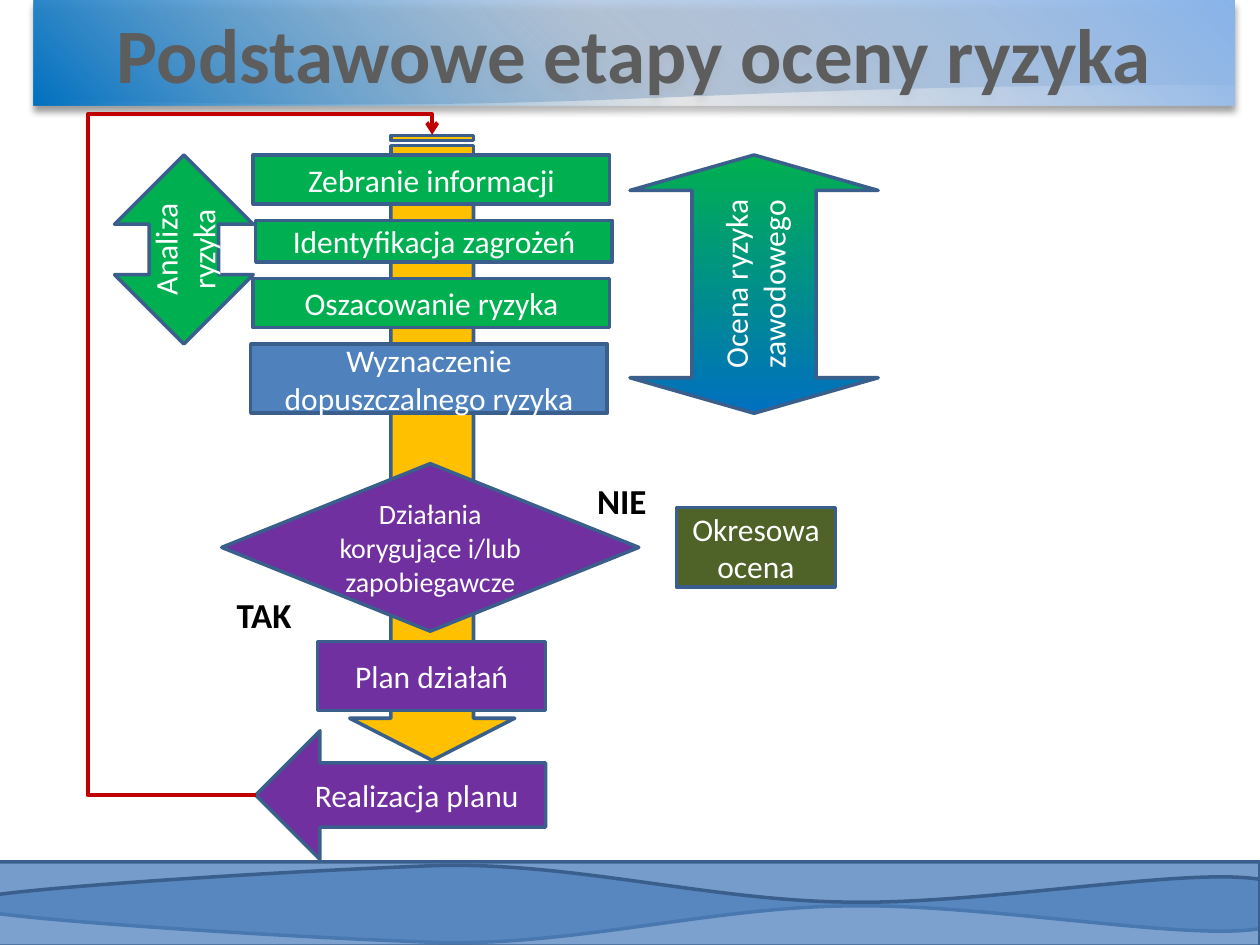
"""Build the slide showing the basic stages of risk assessment."""
from dataclasses import dataclass
from typing import Optional

from lxml import etree
from pptx import Presentation
from pptx.dml.color import RGBColor
from pptx.enum.shapes import MSO_CONNECTOR, MSO_SHAPE
from pptx.enum.text import MSO_ANCHOR, PP_ALIGN
from pptx.oxml.ns import qn
from pptx.util import Inches, Pt

SLIDE_WIDTH, SLIDE_HEIGHT = Inches(10), Inches(7.5)
GRID_COLUMNS = 10
UNIT = SLIDE_WIDTH / GRID_COLUMNS
RECTANGLE = MSO_SHAPE.RECTANGLE
DOCUMENT = MSO_SHAPE.FLOWCHART_DOCUMENT
STRIPED_ARROW = MSO_SHAPE.STRIPED_RIGHT_ARROW
DOUBLE_ARROW = MSO_SHAPE.UP_DOWN_ARROW
LEFT_ARROW = MSO_SHAPE.LEFT_ARROW
DECISION = MSO_SHAPE.FLOWCHART_DECISION
ELBOW = MSO_CONNECTOR.ELBOW
MIDDLE, CENTER = MSO_ANCHOR.MIDDLE, PP_ALIGN.CENTER
FONT = "Calibri"
BLUE, BORDER, GREEN, PURPLE = "4F81BD", "3A5F8C", "00B050", "7030A0"
WHITE, BLACK, AMBER, OLIVE, RED = "FFFFFF", "000000", "FFC000", "4F6228", "C00000"
TITLE_GREY = "5D5D5D"

WAVE_MIRROR = 14.35
WAVE_EDGE = [(-0.03, 6.84), (10, 6.84), (10, 7.37)]
WAVE_CURVES = [
    (9.42, 7.47), (7.82, 7.17), (6.73, 7.19),
    (5.64, 7.2), (4.55, 7.51), (3.46, 7.48),
    (2.36, 7.44), (0.58, 7.33), (-0.02, 7.25),
]


@dataclass
class Stage:
    """A filled shape of the diagram, placed in grid units."""
    kind: MSO_SHAPE
    left: float
    top: float
    width: float
    height: float
    fill: Optional[str]
    text: str = ""
    size: int = 18
    color: str = WHITE
    bold: bool = False
    border: Optional[str] = BORDER
    vertical: bool = False
    rotation: int = 0
    adjustments: tuple = ()


BANNER = (0.27, 0, 9.53, 0.84)
BACKDROP = Stage(DOCUMENT, *BANNER, BLUE, border=None)
TITLE = Stage(RECTANGLE, *BANNER, None, "Podstawowe etapy oceny ryzyka", 44,
              TITLE_GREY, bold=True, border=None)
TITLE_STOPS = [(0, "0070C0", 100), (50, "F9FBFE", 62), (100, "87B3E9", 100)]
SPINE = Stage(STRIPED_ARROW, 0.95, 2.9, 4.96, 1.31, AMBER, rotation=90,
              adjustments=(50000, 25500))
ASSESSMENT = Stage(DOUBLE_ARROW, 5, 1.23, 1.97, 2.05, None,
                   "Ocena ryzyka zawodowego", vertical=True, adjustments=(50000, 14300))
ASSESSMENT_STOPS = [(0, GREEN, 100), (100, "0070C0", 100)]
STAGES = [
    Stage(RECTANGLE, 2.01, 1.23, 2.83, 0.39, GREEN, "Zebranie informacji"),
    Stage(RECTANGLE, 2.03, 1.75, 2.83, 0.33, GREEN, "Identyfikacja zagrożeń"),
    Stage(RECTANGLE, 2.01, 2.21, 2.83, 0.39, GREEN, "Oszacowanie ryzyka"),
    Stage(RECTANGLE, 1.99, 2.73, 2.83, 0.55, BLUE, "Wyznaczenie dopuszczalnego ryzyka"),
    Stage(DOUBLE_ARROW, 0.91, 1.23, 1.1, 1.5, GREEN, "Analiza ryzyka", vertical=True),
    Stage(DECISION, 1.76, 3.68, 3.31, 1.33, PURPLE,
          "Działania korygujące i/lub zapobiegawcze", 16),
    Stage(RECTANGLE, 5.37, 4.03, 1.26, 0.63, OLIVE, "Okresowa ocena"),
    Stage(RECTANGLE, 2.52, 5.09, 1.81, 0.55, PURPLE, "Plan działań"),
    Stage(LEFT_ARROW, 2.03, 5.8, 2.3, 1.02, PURPLE, "Realizacja planu"),
]
ANSWERS = [("NIE", 4.64, 3.76), ("TAK", 1.78, 4.66)]


def units(*values: float) -> list[int]:
    """Turn grid units into slide lengths."""
    return [round(value * UNIT) for value in values]


def rgb(color: str) -> RGBColor:
    """Turn a hex string into a colour."""
    return RGBColor.from_string(color)


def add_color(parent, color: str, opacity: int) -> None:
    """Append a colour with an opacity in percent."""
    node = etree.SubElement(parent, qn("a:srgbClr"), val=color)
    etree.SubElement(node, qn("a:alpha"), val=str(opacity * 1000))


def set_outline(shape, color: Optional[str]) -> None:
    """Outline a shape, or leave it without a line."""
    if color is None:
        shape.line.fill.background()
        return
    shape.line.color.rgb = rgb(color)
    shape.line.width = Pt(2)


def set_guides(geometry, values: tuple) -> None:
    """Replace the adjustment guides of a preset geometry."""
    guides = geometry.find(qn("a:avLst"))
    for guide in list(guides):
        guides.remove(guide)
    for number, value in enumerate(values, start=1):
        etree.SubElement(guides, qn("a:gd"), name=f"adj{number}", fmla=f"val {value}")


def set_gradient(shape, stops: list, angle: int) -> None:
    """Fill a shape with a linear gradient, its angle running clockwise."""
    gradient = etree.Element(qn("a:gradFill"), rotWithShape="1")
    stop_list = etree.SubElement(gradient, qn("a:gsLst"))
    for position, color, opacity in stops:
        stop = etree.SubElement(stop_list, qn("a:gs"), pos=str(position * 1000))
        add_color(stop, color, opacity)
    etree.SubElement(gradient, qn("a:lin"), ang=str(angle * 60000), scaled="0")
    shape.element.spPr.find(qn("a:prstGeom")).addnext(gradient)


def format_text(text_frame, size: int, color: str, bold: bool) -> None:
    """Format every run of a text frame."""
    for paragraph in text_frame.paragraphs:
        for run in paragraph.runs:
            run.font.name, run.font.size, run.font.bold = FONT, Pt(size), bold
            run.font.color.rgb = rgb(color)


def add_stage(slide, stage: Stage):
    """Draw one stage with its label."""
    shape = slide.shapes.add_shape(
        stage.kind, *units(stage.left, stage.top, stage.width, stage.height))
    shape.shadow.inherit = False
    shape.rotation = stage.rotation
    if stage.adjustments:
        set_guides(shape.element.spPr.find(qn("a:prstGeom")), stage.adjustments)
    if stage.fill:
        shape.fill.solid()
        shape.fill.fore_color.rgb = rgb(stage.fill)
    set_outline(shape, stage.border)
    if stage.text:
        frame = shape.text_frame
        frame.text, frame.word_wrap, frame.vertical_anchor = stage.text, True, MIDDLE
        frame.paragraphs[0].alignment = CENTER
        format_text(frame, stage.size, stage.color, stage.bold)
        if stage.vertical:
            shape.element.txBody.find(qn("a:bodyPr")).set("vert", "vert270")
    return shape


def bend_segments(wave, first: int) -> None:
    """Join the line segments from the given one on into cubic curves."""
    segments = list(wave.element.spPr.iter(qn("a:lnTo")))[first:]
    for index in range(0, len(WAVE_CURVES), 3):
        curve = etree.Element(qn("a:cubicBezTo"))
        segments[index].addprevious(curve)
        for segment in segments[index:index + 3]:
            curve.append(segment[0])
            segment.getparent().remove(segment)


def add_wave(slide, mirrored: bool, opacity: int) -> None:
    """Draw a footer wave, upright or mirrored top to bottom."""
    points = [units(x, WAVE_MIRROR - y if mirrored else y)
              for x, y in WAVE_EDGE + WAVE_CURVES]
    builder = slide.shapes.build_freeform(*points[0])
    builder.add_line_segments(points[1:], close=True)
    wave = builder.convert_to_shape()
    bend_segments(wave, len(WAVE_EDGE) - 1)
    wave.shadow.inherit = False
    wave.fill.solid()
    wave.fill.fore_color.rgb = rgb(BLUE)
    solid = wave.element.spPr.find(qn("a:solidFill"))
    solid.remove(solid[0])
    add_color(solid, BLUE, opacity)
    set_outline(wave, BORDER)


def add_title(slide) -> None:
    """Draw the title banner with its gradient and shadow."""
    banner = add_stage(slide, TITLE)
    set_gradient(banner, TITLE_STOPS, 315)
    shadow = etree.SubElement(
        banner.element.spPr.find(qn("a:effectLst")), qn("a:outerShdw"),
        blurRad=str(Pt(4)), dist=str(Pt(3)), dir="5400000", rotWithShape="0")
    add_color(shadow, BLACK, 40)


def add_return_arrow(slide) -> None:
    """Draw the bent arrow leading from the last stage to the first."""
    arrow = slide.shapes.add_connector(ELBOW, *units(2.03, 6.31, 3.43, 1.07))
    arrow.line.color.rgb, arrow.line.width = rgb(RED), Pt(2.25)
    properties = arrow.element.spPr
    frame = properties.find(qn("a:xfrm"))
    frame.attrib.pop("flipV")
    frame.set("rot", "10800000")
    frame.set("flipH", "1")
    geometry = properties.find(qn("a:prstGeom"))
    geometry.set("prst", "bentConnector4")
    set_guides(geometry, (-95300, 103100))
    etree.SubElement(properties.find(qn("a:ln")), qn("a:tailEnd"), type="arrow")
    etree.SubElement(properties, qn("a:effectLst"))


def add_answer(slide, text: str, left: float, top: float) -> None:
    """Write a branch label beside the decision."""
    frame = slide.shapes.add_textbox(*units(left, top, 0.67, 0.44)).text_frame
    frame.text, frame.word_wrap = text, True
    format_text(frame, 20, BLACK, True)


def main() -> None:
    """Build and save the presentation."""
    presentation = Presentation()
    presentation.slide_width, presentation.slide_height = SLIDE_WIDTH, SLIDE_HEIGHT
    slide = presentation.slides.add_slide(presentation.slide_layouts[6])
    add_wave(slide, False, 78)
    add_wave(slide, True, 74)
    for stage in (BACKDROP, SPINE):
        add_stage(slide, stage)
    add_title(slide)
    set_gradient(add_stage(slide, ASSESSMENT), ASSESSMENT_STOPS, 90)
    for stage in STAGES:
        add_stage(slide, stage)
    add_return_arrow(slide)
    for answer in ANSWERS:
        add_answer(slide, *answer)
    presentation.save("out.pptx")


if __name__ == "__main__":
    main()
